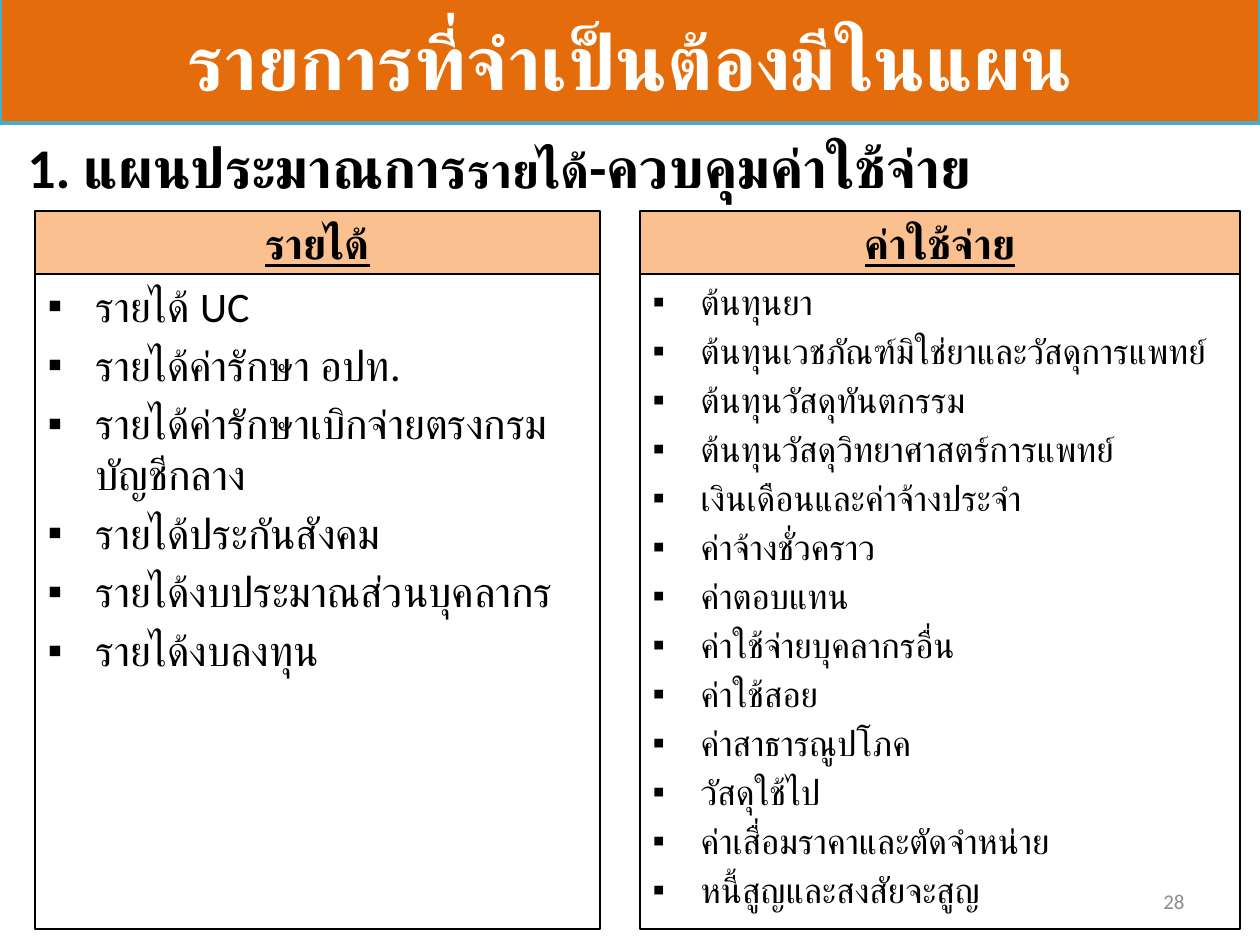
"""Build the slide listing the income and expense items a plan must have."""
from dataclasses import dataclass

from lxml import etree
from pptx import Presentation
from pptx.dml.color import RGBColor
from pptx.enum.text import MSO_ANCHOR, MSO_AUTO_SIZE, PP_ALIGN
from pptx.oxml.ns import qn
from pptx.util import Emu, Pt

LEFT, CENTER, RIGHT = PP_ALIGN.LEFT, PP_ALIGN.CENTER, PP_ALIGN.RIGHT
TOP, MIDDLE, BOTTOM = MSO_ANCHOR.TOP, MSO_ANCHOR.MIDDLE, MSO_ANCHOR.BOTTOM
NO_FIT = MSO_AUTO_SIZE.NONE
COMPARISON = 4


@dataclass(frozen=True)
class Theme:
    font: str = "Calibri"
    banner: str = "E46C0A"
    banner_line: str = "4BACC6"
    header: str = "FAC090"
    ink: str = "000000"
    white: str = "FFFFFF"
    muted: str = "8C8C8C"
    title: int = 44
    heading: int = 32
    heading_small: int = 28
    column: int = 24
    dense: int = 20
    number: int = 12


T = Theme()
TITLE = "รายการที่จำเป็นต้องมีในแผน"
HEADING = [
    ("1. แผนประมาณการ", T.heading),
    ("รายได้", T.heading_small),
    ("-ควบคุมค่าใช้จ่าย", T.heading),
]
PAGE = "28"
COLUMNS = [
    dict(name="รายได้", x=35, w=565, size=T.column, items=[
        "รายได้ UC",
        "รายได้ค่ารักษา อปท.",
        "รายได้ค่ารักษาเบิกจ่ายตรงกรมบัญชีกลาง",
        "รายได้ประกันสังคม",
        "รายได้งบประมาณส่วนบุคลากร",
        "รายได้งบลงทุน",
    ]),
    dict(name="ค่าใช้จ่าย", x=640, w=600, size=T.dense, items=[
        "ต้นทุนยา",
        "ต้นทุนเวชภัณฑ์มิใช่ยาและวัสดุการแพทย์",
        "ต้นทุนวัสดุทันตกรรม",
        "ต้นทุนวัสดุวิทยาศาสตร์การแพทย์",
        "เงินเดือนและค่าจ้างประจำ",
        "ค่าจ้างชั่วคราว",
        "ค่าตอบแทน",
        "ค่าใช้จ่ายบุคลากรอื่น",
        "ค่าใช้สอย",
        "ค่าสาธารณูปโภค",
        "วัสดุใช้ไป",
        "ค่าเสื่อมราคาและตัดจำหน่าย",
        "หนี้สูญและสงสัยจะสูญ",
    ]),
]
HEAD_TOP, HEAD_H, LIST_H = 211, 63, 655
INDENT = 48


def px(n):
    return Emu(round(n * 914400 / 126))


def place(sp, x, y, w, h):
    sp.left, sp.top, sp.width, sp.height = px(x), px(y), px(w), px(h)


def style_box(sp, line, width, fill=None):
    if fill:
        sp.fill.solid()
        sp.fill.fore_color.rgb = RGBColor.from_string(fill)
    sp.line.color.rgb = RGBColor.from_string(line)
    sp.line.width = Pt(width)


def write(sp, paragraphs, color=T.ink, bold=False, underline=False,
          align=LEFT, anchor=TOP, bullet=None):
    """Fill a shape with paragraphs, each a list of (text, size) runs."""
    tf = sp.text_frame
    tf.word_wrap, tf.auto_size, tf.vertical_anchor = True, NO_FIT, anchor
    for i, runs in enumerate(paragraphs):
        p = tf.add_paragraph() if i else tf.paragraphs[0]
        p.alignment = align
        if bullet:
            pPr = p._p.get_or_add_pPr()
            pPr.set("marL", str(px(INDENT)))
            pPr.set("indent", str(-px(INDENT)))
            etree.SubElement(pPr, qn("a:buChar")).set("char", bullet)
        for text, size in runs:
            r = p.add_run()
            r.text = text
            r.font.name, r.font.size = T.font, Pt(size)
            r.font.bold, r.font.underline = bold, underline
            r.font.color.rgb = RGBColor.from_string(color)


def add_text(slide, box, runs, **fmt):
    sp = slide.shapes.add_textbox(*map(px, box))
    write(sp, [runs], anchor=MIDDLE, **fmt)


def main():
    prs = Presentation()
    prs.slide_width, prs.slide_height = px(1260), px(945)
    slide = prs.slides.add_slide(prs.slide_layouts[COMPARISON])
    title, *bodies = slide.placeholders

    place(title, 0, -4, 1260, 127)
    style_box(title, T.banner_line, 2, T.banner)
    write(title, [[(TITLE, T.title)]], color=T.white, bold=True,
          align=CENTER, anchor=MIDDLE)

    for col, head, body in zip(COLUMNS, bodies[::2], bodies[1::2]):
        place(head, col["x"], HEAD_TOP, col["w"], HEAD_H)
        style_box(head, T.ink, 0.75, T.header)
        write(head, [[(col["name"], T.column)]], bold=True, underline=True,
              align=CENTER, anchor=BOTTOM)
        place(body, col["x"], HEAD_TOP + HEAD_H, col["w"], LIST_H)
        style_box(body, T.ink, 0.75)
        write(body, [[(item, col["size"])] for item in col["items"]], bullet="▪")

    add_text(slide, (15, 135, 1225, 63), HEADING, bold=True)
    add_text(slide, (903, 876, 294, 50), [(PAGE, T.number)],
             color=T.muted, align=RIGHT)
    prs.save("out.pptx")


if __name__ == "__main__":
    main()
